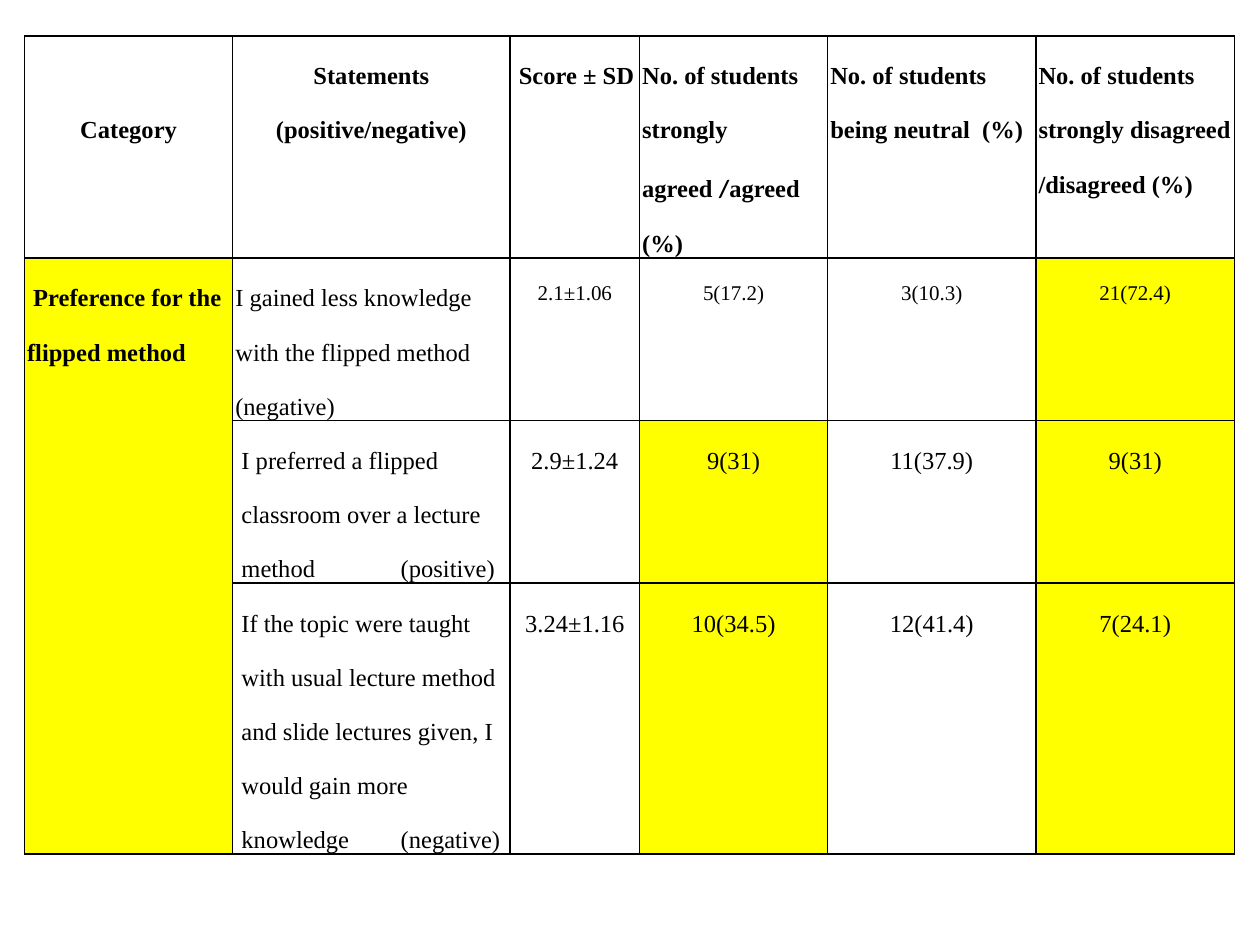
from dataclasses import dataclass

from lxml.etree import SubElement
from pptx import Presentation
from pptx.dml.color import RGBColor
from pptx.enum.text import MSO_ANCHOR, PP_ALIGN
from pptx.oxml.ns import qn
from pptx.util import Pt


@dataclass(frozen=True)
class Theme:
    ink: str = "000000"
    highlight: str = "FFFF00"
    font: str = "Times New Roman"
    slash_font: str = "Calibri"
    body: float = 14
    small: float = 12
    line_spacing: float = 2.0
    border: float = 1
    tight_inset: float = 1.5
    wide_inset: float = 5
    tab_stop: float = 91


THEME = Theme()


@dataclass(frozen=True)
class Statement:
    lines: tuple[str, ...]
    results: tuple[str, ...]  # score, agreed, neutral, disagreed
    highlighted: tuple[int, ...]  # positions in results
    size: float = THEME.body
    inset: float = THEME.wide_inset


LEFT, TOP = 14, 20.5
COLUMN_WIDTHS = (119, 158.5, 74, 107.5, 119, 113.5)
ROW_HEIGHTS = (126.5, 92.5, 92.5, 154.5)
CATEGORY_DROP = 31  # one double-spaced line

# Header: lines of each column, and whether they are centred
HEADERS = (
    (("Category",), True),
    (("Statements", "(positive/negative)"), True),
    ((" Score ± SD",), False),
    (("No. of students strongly agreed /agreed (%)",), False),
    (("No. of students", "being neutral  (%)"), False),
    (("No. of students strongly disagreed", "/disagreed (%)"), False),
)
CATEGORY = " Preference for the flipped method"
STATEMENTS = (
    Statement(("I gained less knowledge with the flipped method", "(negative)"),
              ("2.1±1.06", "5(17.2)", "3(10.3)", "21(72.4)"), (3,),
              THEME.small, THEME.tight_inset),
    Statement(("I preferred a flipped classroom over a lecture method\t(positive)",),
              ("2.9±1.24", "9(31)", "11(37.9)", "9(31)"), (1, 3)),
    Statement(("If the topic were taught with usual lecture method and slide "
               "lectures given, I would gain more knowledge\t(negative)",),
              ("3.24±1.16", "10(34.5)", "12(41.4)", "7(24.1)"), (1, 3)),
)


def add_text(paragraph, text: str, *, size: float = THEME.body, bold: bool = False,
             font: str = THEME.font) -> None:
    run = paragraph.add_run()
    run.text = text
    run.font.name = font
    run.font.size = Pt(size)
    run.font.bold = bold
    run.font.color.rgb = RGBColor.from_string(THEME.ink)


def add_tab_stop(paragraph, position: float) -> None:
    stops = SubElement(paragraph._p.get_or_add_pPr(), qn("a:tabLst"))
    SubElement(stops, qn("a:tab"), pos=str(Pt(position)), algn="l")


def add_borders(cell) -> None:
    properties = cell._tc.get_or_add_tcPr()
    for side in ("lnL", "lnR", "lnT", "lnB"):
        line = SubElement(properties, qn(f"a:{side}"), w=str(Pt(THEME.border)))
        SubElement(SubElement(line, qn("a:solidFill")), qn("a:srgbClr"), val=THEME.ink)


def style_cell(cell, highlighted: bool = False, inset: float = THEME.tight_inset,
               drop: float = 0) -> None:
    add_borders(cell)
    cell.margin_left = cell.margin_right = Pt(inset)
    cell.margin_top, cell.margin_bottom = Pt(drop), Pt(0)
    cell.vertical_anchor = MSO_ANCHOR.TOP
    if highlighted:
        cell.fill.solid()
        cell.fill.fore_color.rgb = RGBColor.from_string(THEME.highlight)
    else:
        cell.fill.background()


def write_lines(cell, lines: tuple[str, ...], *, centred: bool = False,
                size: float = THEME.body, bold: bool = False) -> None:
    frame = cell.text_frame
    for index, line in enumerate(lines):
        paragraph = frame.add_paragraph() if index else frame.paragraphs[0]
        paragraph.alignment = PP_ALIGN.CENTER if centred else PP_ALIGN.LEFT
        paragraph.line_spacing = THEME.line_spacing
        if "\t" in line:
            add_tab_stop(paragraph, THEME.tab_stop)
        # A slash inside a line is set in its own font
        before, slash, after = line.partition(" /")
        if slash:
            add_text(paragraph, before + " ", size=size, bold=bold)
            add_text(paragraph, "/", size=size, bold=bold, font=THEME.slash_font)
            add_text(paragraph, after, size=size, bold=bold)
        else:
            add_text(paragraph, line, size=size, bold=bold)


def fill_statement(table, row: int, statement: Statement) -> None:
    statement_cell = table.cell(row, 1)
    style_cell(statement_cell, inset=statement.inset)
    write_lines(statement_cell, statement.lines)
    for position, result in enumerate(statement.results):
        result_cell = table.cell(row, position + 2)
        style_cell(result_cell, position in statement.highlighted, statement.inset)
        write_lines(result_cell, (result,), centred=True, size=statement.size)


def build() -> None:
    deck = Presentation()
    deck.slide_width, deck.slide_height = Pt(720), Pt(540)
    slide = deck.slides.add_slide(deck.slide_layouts[6])

    # Grid
    table = slide.shapes.add_table(
        len(ROW_HEIGHTS), len(COLUMN_WIDTHS), Pt(LEFT), Pt(TOP),
        Pt(sum(COLUMN_WIDTHS)), Pt(sum(ROW_HEIGHTS))).table
    table.first_row = table.horz_banding = False
    for column, width in zip(table.columns, COLUMN_WIDTHS):
        column.width = Pt(width)
    for row, height in zip(table.rows, ROW_HEIGHTS):
        row.height = Pt(height)

    # Header row
    for column, (lines, centred) in enumerate(HEADERS):
        header = table.cell(0, column)
        style_cell(header, drop=0 if column else CATEGORY_DROP)
        write_lines(header, lines, centred=centred, bold=True)

    # Category spanning all statements
    for row in range(1, len(ROW_HEIGHTS)):
        style_cell(table.cell(row, 0), highlighted=True)
    category = table.cell(1, 0)
    category.merge(table.cell(len(ROW_HEIGHTS) - 1, 0))
    write_lines(category, (CATEGORY,), bold=True)

    # Statements and their results
    for row, statement in enumerate(STATEMENTS, start=1):
        fill_statement(table, row, statement)

    deck.save("out.pptx")


if __name__ == "__main__":
    build()
